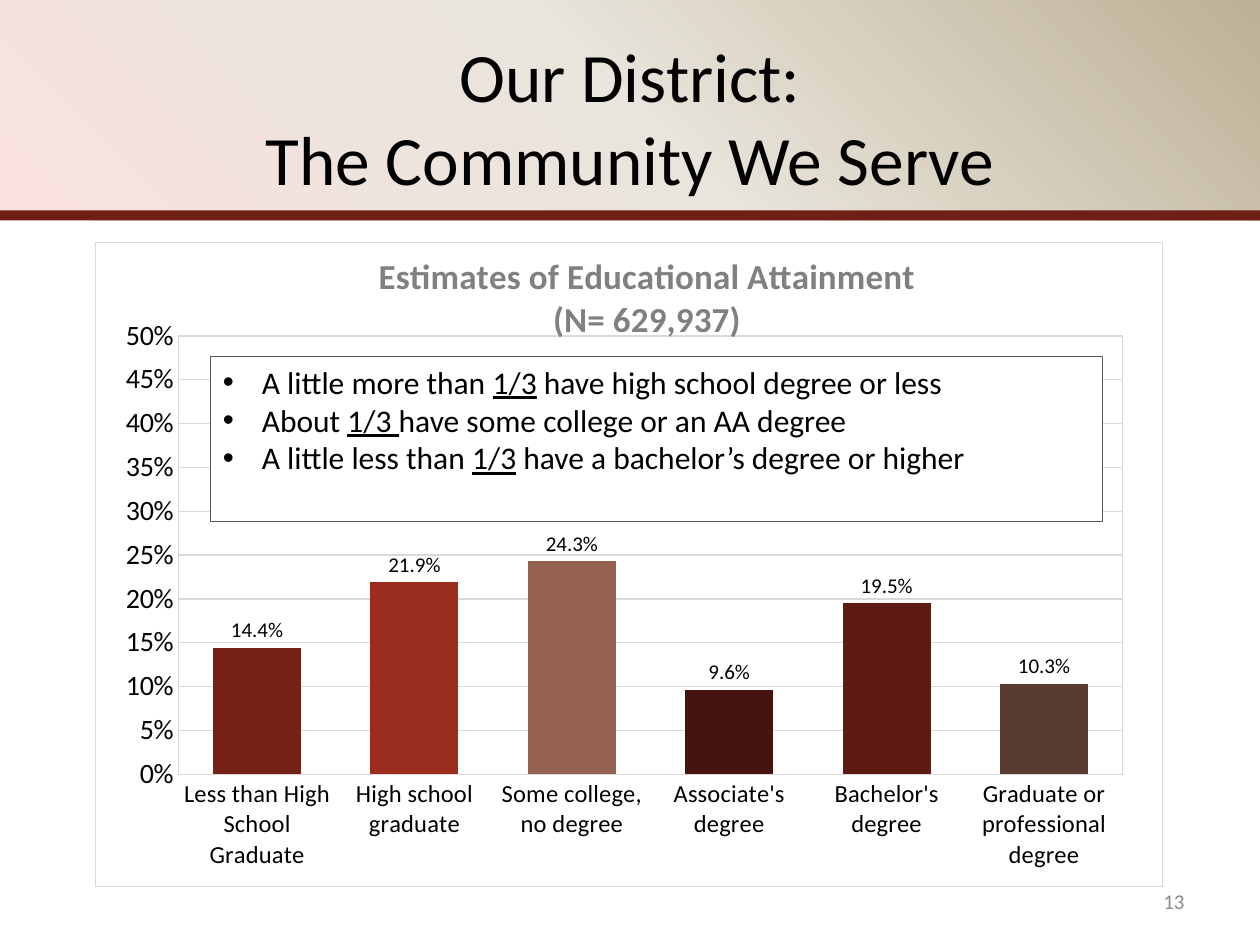
from dataclasses import dataclass

from pptx import Presentation
from pptx.chart.data import CategoryChartData
from pptx.dml.color import RGBColor
from pptx.enum.chart import XL_CHART_TYPE, XL_LABEL_POSITION, XL_TICK_MARK
from pptx.enum.shapes import MSO_SHAPE
from pptx.enum.text import MSO_ANCHOR, MSO_AUTO_SIZE, PP_ALIGN
from pptx.oxml import parse_xml
from pptx.oxml.ns import nsdecls, qn
from pptx.util import Inches, Pt


@dataclass(frozen=True)
class Theme:
    font: str = "Calibri"
    text: str = "000000"
    paper: str = "FFFFFF"
    accent: str = "6E1F16"
    grid: str = "D9D9D9"
    box_line: str = "595959"
    chart_title: str = "808080"
    page_number: str = "8C8C8C"
    band: tuple = ((0, "BDB196"), (50, "E9E5DC"), (100, "F8E1DE"))
    title_size: float = 39.6
    chart_title_size: float = 20
    list_size: float = 18
    value_size: float = 16
    category_size: float = 14
    small_size: float = 12
    hairline: float = 0.75


THEME = Theme()

# Category, share of residents, column colour
ATTAINMENT = [
    ("Less than High School Graduate", 0.144, "742117"),
    ("High school graduate", 0.219, "9B2D1F"),
    ("Some college, no degree", 0.243, "956251"),
    ("Associate's degree", 0.096, "46140E"),
    ("Bachelor's degree", 0.195, "5D1B13"),
    ("Graduate or professional degree", 0.103, "593B31"),
]

# Text before, underlined share, text after
FINDINGS = [
    ("A little more than ", "1/3", " have high school degree or less"),
    ("About ", "1/3 ", "have some college or an AA degree"),
    ("A little less than ", "1/3", " have a bachelor’s degree or higher"),
]


def style_font(font, size, color=THEME.text, bold=None):
    font.name = THEME.font
    font.size = Pt(size)
    font.color.rgb = RGBColor.from_string(color)
    font.bold = bold


def style_line(line, color=THEME.grid):
    line.color.rgb = RGBColor.from_string(color)
    line.width = Pt(THEME.hairline)


def add_rectangle(slide, left, top, width, height, color):
    shape = slide.shapes.add_shape(
        MSO_SHAPE.RECTANGLE, Inches(left), Inches(top), Inches(width), Inches(height))
    shape.shadow.inherit = False
    shape.fill.solid()
    shape.fill.fore_color.rgb = RGBColor.from_string(color)
    shape.line.fill.background()
    return shape


def add_header(slide):
    band = add_rectangle(slide, 0, 0, 10, 1.75, THEME.paper)
    # Radial gradient centred on the top right corner
    stops = "".join(
        f'<a:gs pos="{position * 1000}"><a:srgbClr val="{color}"/></a:gs>'
        for position, color in THEME.band)
    gradient = parse_xml(
        f'<a:gradFill {nsdecls("a")} rotWithShape="1"><a:gsLst>{stops}</a:gsLst>'
        '<a:path path="circle"><a:fillToRect l="100000" b="100000"/></a:path>'
        '</a:gradFill>')
    solid = band.element.spPr.find(qn("a:solidFill"))
    solid.getparent().replace(solid, gradient)
    add_rectangle(slide, 0, 1.67, 10, 0.08, THEME.accent)


def add_title(slide, text):
    title = slide.shapes.title
    title.left, title.top, title.width, title.height = (
        Inches(0), Inches(0.3), Inches(10), Inches(1.25))
    frame = title.text_frame
    frame.text = text
    frame.vertical_anchor = MSO_ANCHOR.MIDDLE
    frame.auto_size = MSO_AUTO_SIZE.NONE
    paragraph = frame.paragraphs[0]
    paragraph.alignment = PP_ALIGN.CENTER
    style_font(paragraph.font, THEME.title_size)
    # Bring the title in front of the header band
    title.element.getparent().append(title.element)


def add_page_number(slide, number):
    box = slide.shapes.add_textbox(Inches(7.17), Inches(6.95), Inches(2.33), Inches(0.4))
    frame = box.text_frame
    frame.word_wrap = True
    frame.vertical_anchor = MSO_ANCHOR.MIDDLE
    frame.text = number
    paragraph = frame.paragraphs[0]
    paragraph.alignment = PP_ALIGN.RIGHT
    style_font(paragraph.font, THEME.small_size, THEME.page_number)


def set_layout(parent, index, positions, target=""):
    """Place a chart part by fractions of the chart's size."""
    previous = parent.find(qn("c:layout"))
    if previous is not None:
        parent.remove(previous)
    names = ("x", "y", "w", "h")[:len(positions)]
    modes = "".join(f'<c:{name}Mode val="edge"/>' for name in names[:2])
    values = "".join(
        f'<c:{name} val="{value}"/>' for name, value in zip(names, positions))
    parent.insert(index, parse_xml(
        f'<c:layout {nsdecls("c")}><c:manualLayout>{target}{modes}{values}'
        '</c:manualLayout></c:layout>'))


def frame_properties(fill):
    return parse_xml(
        f'<c:spPr {nsdecls("c", "a")}>{fill}<a:ln w="{Pt(THEME.hairline)}"><a:solidFill>'
        f'<a:srgbClr val="{THEME.grid}"/></a:solidFill></a:ln></c:spPr>')


def add_chart_title(chart, lines):
    frame = chart.chart_title.text_frame
    frame.text = "\n".join(lines)
    for paragraph in frame.paragraphs:
        style_font(paragraph.font, THEME.chart_title_size, THEME.chart_title, True)
    chart.chart_title.include_in_layout = False
    set_layout(chart.chart_title._element, 1, (0.262, 0.01))


def style_axes(chart):
    categories, values = chart.category_axis, chart.value_axis
    for axis, size in ((categories, THEME.category_size), (values, THEME.value_size)):
        axis.major_tick_mark = axis.minor_tick_mark = XL_TICK_MARK.NONE
        style_font(axis.tick_labels.font, size)
    style_line(categories.format.line)
    values.minimum_scale, values.maximum_scale, values.major_unit = 0, 0.5, 0.05
    values.tick_labels.number_format = "0%"
    values.tick_labels.number_format_is_linked = False
    values.format.line.fill.background()
    style_line(values.major_gridlines.format.line)


def add_attainment_chart(slide):
    data = CategoryChartData(number_format="0.0%")
    data.categories = [name for name, _, _ in ATTAINMENT]
    data.add_series("Series 1", [share for _, share, _ in ATTAINMENT])
    chart = slide.shapes.add_chart(
        XL_CHART_TYPE.COLUMN_CLUSTERED,
        Inches(0.75), Inches(1.92), Inches(8.48), Inches(5.12), data).chart
    style_font(chart.font, 10)
    chart.has_legend = False
    add_chart_title(chart, ["Estimates of Educational Attainment", "(N= 629,937)"])
    style_axes(chart)

    # Columns and their labels
    plot = chart.plots[0]
    plot.gap_width, plot.overlap, plot.vary_by_categories = 79, -1, False
    for index, (_, _, color) in enumerate(ATTAINMENT):
        fill = plot.series[0].points[index].format.fill
        fill.solid()
        fill.fore_color.rgb = RGBColor.from_string(color)
    labels = plot.series[0].data_labels
    labels.show_value = True
    labels.position = XL_LABEL_POSITION.OUTSIDE_END
    labels.number_format, labels.number_format_is_linked = "0.0%", False
    style_font(labels.font, THEME.small_size)

    # Plot position and the frames around plot and chart
    chart_element = chart.element.find(qn("c:chart"))
    plot_area = chart_element.find(qn("c:plotArea"))
    set_layout(plot_area, 0, (0.078, 0.145, 0.885, 0.681),
               '<c:layoutTarget val="inner"/>')
    plot_area.append(frame_properties("<a:noFill/>"))
    chart_element.addnext(frame_properties(
        f'<a:solidFill><a:srgbClr val="{THEME.paper}"/></a:solidFill>'))


def add_findings(slide):
    box = add_rectangle(slide, 1.67, 2.83, 7.08, 1.31, THEME.paper)
    style_line(box.line, THEME.box_line)
    frame = box.text_frame
    frame.word_wrap = True
    frame.vertical_anchor = MSO_ANCHOR.TOP
    for index, (before, share, after) in enumerate(FINDINGS):
        paragraph = frame.paragraphs[0] if index == 0 else frame.add_paragraph()
        paragraph.alignment = PP_ALIGN.LEFT
        style_font(paragraph.font, THEME.list_size)
        for text in (before, share, after):
            run = paragraph.add_run()
            run.text = text
            if text == share:
                run.font.underline = True
        properties = paragraph._p.get_or_add_pPr()
        properties.set("marL", str(Inches(0.31)))
        properties.set("indent", str(Inches(-0.31)))
        for bullet in ('buFont {} typeface="Arial"', 'buChar {} char="•"'):
            properties.insert_element_before(
                parse_xml(f'<a:{bullet.format(nsdecls("a"))}/>'), "a:defRPr")


def main():
    presentation = Presentation()
    presentation.slide_width, presentation.slide_height = Inches(10), Inches(7.5)
    slide = presentation.slides.add_slide(presentation.slide_layouts[5])
    add_header(slide)
    add_page_number(slide, "13")
    add_title(slide, "Our District:\vThe Community We Serve")
    add_attainment_chart(slide)
    add_findings(slide)
    presentation.save("out.pptx")


if __name__ == "__main__":
    main()
